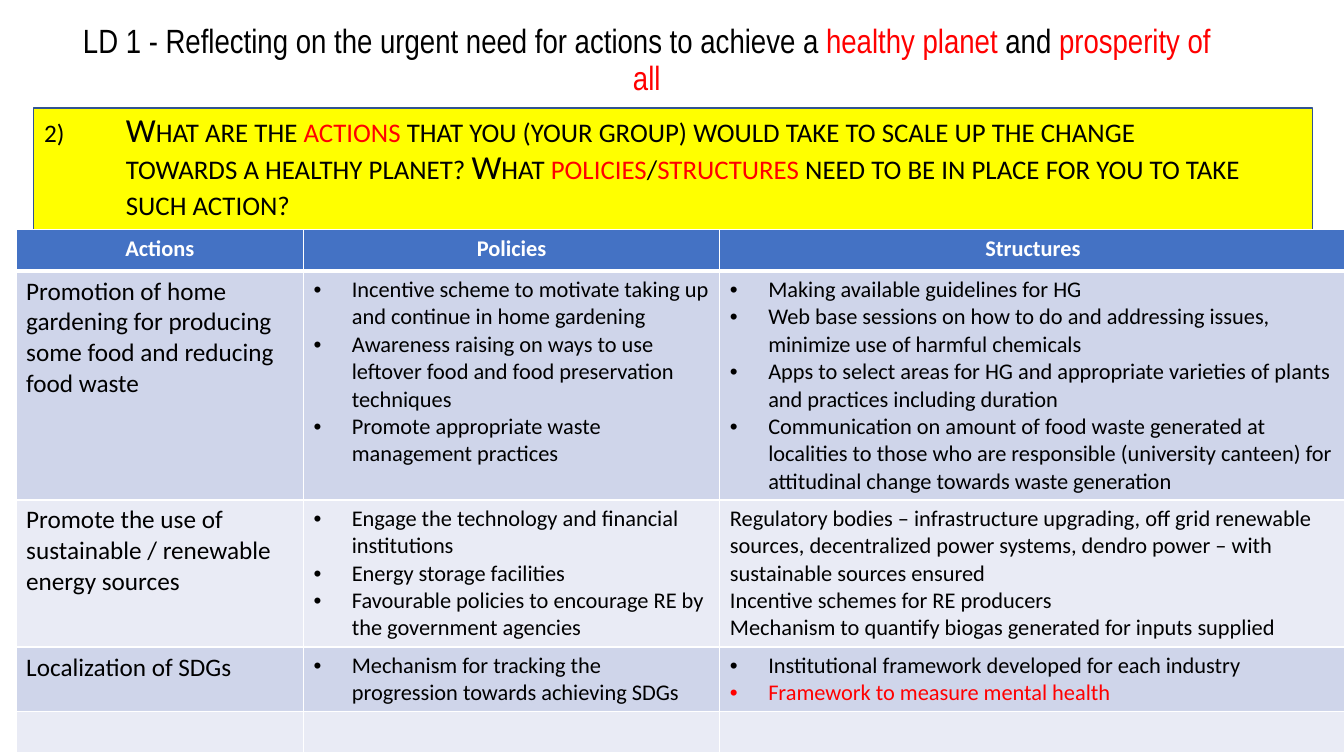
from lxml import etree
from pptx import Presentation
from pptx.dml.color import RGBColor
from pptx.enum import shapes, text
from pptx.oxml import ns
from pptx.util import Inches, Pt

BLACK = RGBColor(0, 0, 0)
WHITE = RGBColor(255, 255, 255)
RED = RGBColor(255, 0, 0)
YELLOW = RGBColor(255, 255, 0)
NAVY = RGBColor(0x32, 0x54, 0x91)
BLUE = RGBColor(0x44, 0x72, 0xC4)
BANDS = [RGBColor(0xCF, 0xD5, 0xEA), RGBColor(0xE9, 0xEB, 0xF5)]

TITLE = [
    ("LD 1 - Reflecting on the urgent need for actions to achieve a ", BLACK),
    ("healthy planet", RED),
    (" and ", BLACK),
    ("prosperity of all", RED),
]
QUESTION = [
    ("What are the ", BLACK),
    ("actions", RED),
    (" that you (your group) would take to scale up the change towards a healthy planet? What ", BLACK),
    ("policies", RED),
    ("/", BLACK),
    ("structures", RED),
    (" need to be in place for you to take such action?", BLACK),
]
HEADS = ["Actions", "Policies", "Structures"]
ROWS = [
    (
        ["Promotion of home gardening for producing some food and reducing food waste"],
        [
            "Incentive scheme to motivate taking up and continue in home gardening",
            "Awareness raising on ways to use leftover food and food preservation techniques",
            "Promote appropriate waste management practices",
        ],
        [
            "Making available guidelines for HG",
            "Web base sessions on how to do and addressing issues, minimize use of harmful chemicals",
            "Apps to select areas for HG and appropriate varieties of plants and practices including duration",
            "Communication on amount of food waste generated at localities to those who are responsible "
            "(university canteen) for attitudinal change towards waste generation",
        ],
    ),
    (
        ["Promote the use of sustainable / renewable energy sources"],
        [
            "Engage the technology and financial institutions",
            "Energy storage facilities",
            "Favourable policies to encourage RE by the government agencies",
        ],
        [
            "Regulatory bodies – infrastructure upgrading, off grid renewable sources, decentralized "
            "power systems, dendro power – with sustainable sources ensured",
            "Incentive schemes for RE producers",
            "Mechanism to quantify biogas generated for inputs supplied",
        ],
    ),
    (
        ["Localization of SDGs"],
        ["Mechanism for tracking the progression towards achieving SDGs"],
        ["Institutional framework developed for each industry", "Framework to measure mental health"],
    ),
    ([], [], []),
]
PLAIN = {(1, 2)}
ALERT = "Framework to measure mental health"
WIDTHS = [2.85, 4.13, 6.21]
HEIGHTS = [0.41, 2.27, 1.46, 0.64, 0.41]


def style(run, font, size, color, bold=False):
    run.font.name = font
    run.font.size = Pt(size)
    run.font.color.rgb = color
    run.font.bold = bold


def add(parent, tag, **attrs):
    return etree.SubElement(parent, ns.qn(tag), attrs)


def indent(para, inches):
    props = para._p.get_or_add_pPr()
    props.set("marL", str(Inches(inches)))
    props.set("indent", str(-Inches(inches)))
    return props


def write(slide, box, parts, font):
    frame = slide.shapes.add_textbox(*map(Inches, box)).text_frame
    frame.word_wrap = True
    para = frame.paragraphs[0]
    para.line_spacing = 0.9
    for words, color in parts:
        run = para.add_run()
        run.text = words
        style(run, font, 24, color)
    return frame, para


def edge(cell, head):
    props = cell._tc.get_or_add_tcPr()
    for side in "LRTB":
        width = 3 if head and side == "B" else 1
        line = add(props, "a:ln" + side, w=str(Pt(width)))
        add(add(line, "a:solidFill"), "a:srgbClr", val=str(WHITE))


def fill(cell, color, head=False):
    edge(cell, head)
    cell.fill.solid()
    cell.fill.fore_color.rgb = color


def main():
    deck = Presentation()
    deck.slide_width, deck.slide_height = Inches(13.33), Inches(7.5)
    slide = deck.slides.add_slide(deck.slide_layouts[6])

    band = slide.shapes.add_shape(
        shapes.MSO_SHAPE.RECTANGLE, *map(Inches, (0.33, 1.07, 12.69, 1.22)))
    band.shadow.inherit = False
    band.fill.solid()
    band.fill.fore_color.rgb = YELLOW
    band.line.color.rgb = NAVY
    band.line.width = Pt(1)

    frame, para = write(slide, (0.34, 1.08, 12.08, 5.33), QUESTION, "Calibri")
    para.space_before = Pt(10)
    props = indent(para, 0.81)
    add(props, "a:buSzPct", val="75000")
    add(props, "a:buAutoNum", type="arabicParenR", startAt="2")
    for run in para.runs:
        run.font._element.set("cap", "small")

    frame, para = write(slide, (0.61, 0.09, 11.61, 1.03), TITLE, "Arial Narrow")
    frame.vertical_anchor = text.MSO_ANCHOR.MIDDLE
    para.alignment = text.PP_ALIGN.CENTER

    table = slide.shapes.add_table(
        len(HEIGHTS), len(WIDTHS), Inches(0.16), Inches(2.28),
        Inches(sum(WIDTHS)), Inches(sum(HEIGHTS))).table
    for col, width in zip(table.columns, WIDTHS):
        col.width = Inches(width)
    for row, height in zip(table.rows, HEIGHTS):
        row.height = Inches(height)

    for c, head in enumerate(HEADS):
        cell = table.cell(0, c)
        fill(cell, BLUE, True)
        cell.text_frame.text = head
        para = cell.text_frame.paragraphs[0]
        para.alignment = text.PP_ALIGN.CENTER
        style(para.runs[0], "Calibri", 16, WHITE, True)

    for r, row in enumerate(ROWS):
        for c, items in enumerate(row):
            cell = table.cell(r + 1, c)
            fill(cell, BANDS[r % 2])
            if not items:
                continue
            cell.text_frame.text = "\n".join(items)
            for para in cell.text_frame.paragraphs:
                color = RED if para.text == ALERT else BLACK
                style(para.runs[0], "Calibri", 16 if c else 18, color)
                if c and (r, c) not in PLAIN:
                    props = indent(para, 0.38)
                    add(props, "a:buFont", typeface="Arial")
                    add(props, "a:buChar", char="•")

    deck.save("out.pptx")


if __name__ == "__main__":
    main()
